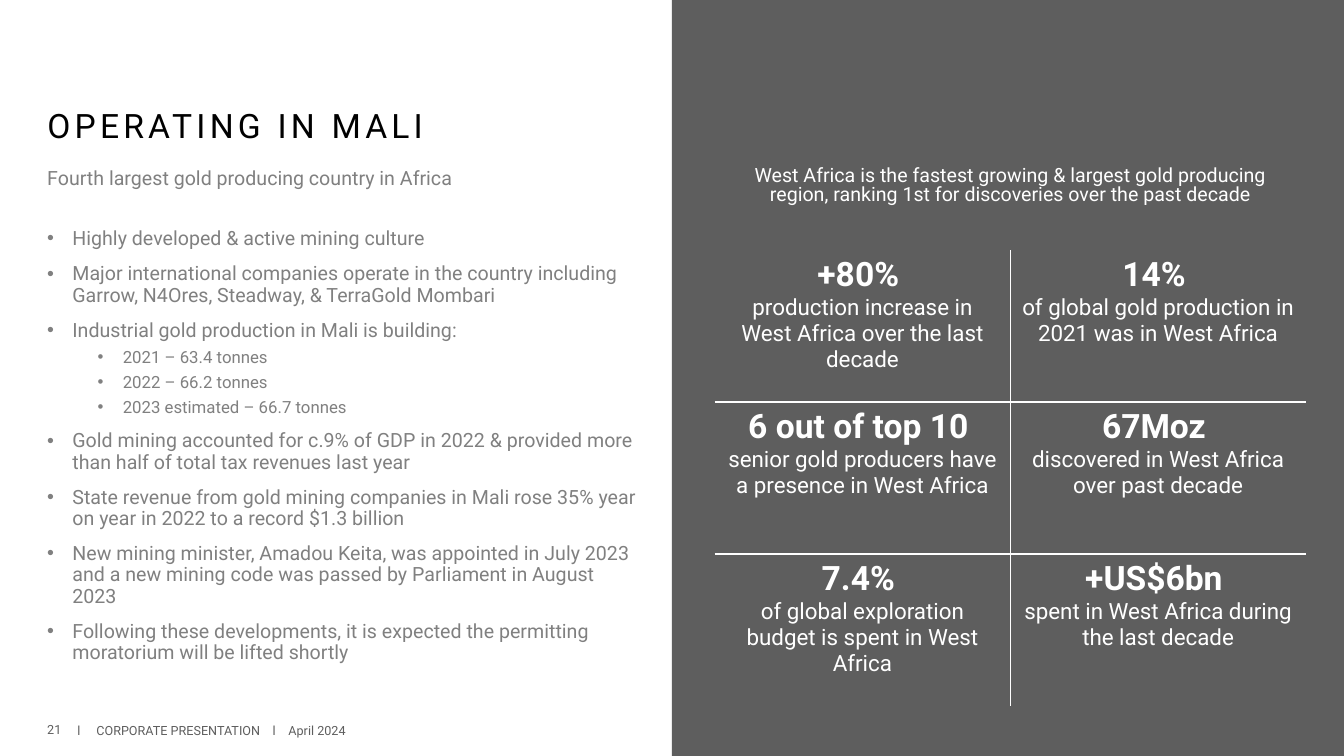
from lxml import etree
from pptx import Presentation
from pptx.dml.color import RGBColor
from pptx.enum import shapes, text
from pptx.oxml import ns
from pptx.util import Cm, Pt

FONT = "Roboto"
WHITE, BLACK, DARK, GREY = "FFFFFF", "000000", "5E5E5E", "808080"
CENTRE = text.PP_ALIGN.CENTER
MIDDLE = text.MSO_ANCHOR.MIDDLE
INDENT = Cm(0.635)

FACTS = [
    (0, "Highly developed & active mining culture"),
    (0, "Major international companies operate in the country including "
        "Garrow, N4Ores, Steadway, & TerraGold Mombari"),
    (0, "Industrial gold production in Mali is building:"),
    (1, "2021 – 63.4 tonnes"),
    (1, "2022 – 66.2 tonnes"),
    (1, "2023 estimated – 66.7 tonnes"),
    (0, "Gold mining accounted for c.9% of GDP in 2022 & provided more than "
        "half of total tax revenues last year"),
    (0, "State revenue from gold mining companies in Mali rose 35% year on "
        "year in 2022 to a record $1.3 billion"),
    (0, "New mining minister, Amadou Keita, was appointed in July 2023 and a "
        "new mining code was passed by Parliament in August 2023"),
    (0, "Following these developments, it is expected the permitting "
        "moratorium will be lifted shortly"),
]

STATISTICS = [
    [("+80% ", "production increase in West Africa over the last decade"),
     ("14% ", "of global gold production in 2021 was in West Africa")],
    [("6 out of top 10 ", "senior gold producers have a presence in West Africa"),
     ("67Moz ", "discovered in West Africa over past decade")],
    [("7.4% ", "of global exploration budget is spent in West Africa"),
     ("+US$6bn ", "spent in West Africa during the last decade")],
]


def colour(value):
    return RGBColor.from_string(value)


def set_all(target, values):
    for name, value in values.items():
        setattr(target, name, value)


def add_child(parent, tag, **attributes):
    return etree.SubElement(parent, ns.qn(tag), attributes)


def write(para, words, size, ink, bold=False, **layout):
    set_all(para, layout)
    span = para.add_run()
    span.text = words
    set_all(span.font, {"name": FONT, "size": Pt(size), "bold": bold})
    span.font.color.rgb = colour(ink)
    return span


def add_box(page, left, top, width, height, anchor=MIDDLE):
    box = page.shapes.add_textbox(Cm(left), Cm(top), Cm(width), Cm(height))
    set_all(box.text_frame, {"word_wrap": True, "vertical_anchor": anchor})
    return box.text_frame


def add_panel(page):
    panel = page.shapes.add_shape(shapes.MSO_SHAPE.RECTANGLE,
                                  Cm(16.93), 0, Cm(16.94), Cm(19.05))
    panel.shadow.inherit = False
    panel.fill.solid()
    panel.fill.fore_color.rgb = colour(DARK)
    panel.line.fill.background()


def add_title(page, words):
    title = page.shapes.title
    set_all(title, {"left": Cm(0.94), "top": Cm(2.34),
                    "width": Cm(15.7), "height": Cm(1.75)})
    title.text_frame.vertical_anchor = MIDDLE
    span = write(title.text_frame.paragraphs[0], words, 24, BLACK,
                 alignment=text.PP_ALIGN.LEFT, line_spacing=0.9)
    span._r.get_or_add_rPr().set("spc", "300")


def add_facts(page):
    frame = add_box(page, 0.94, 5.64, 15.49, 12.07, text.MSO_ANCHOR.TOP)
    for index, (level, words) in enumerate(FACTS):
        para = frame.add_paragraph() if index else frame.paragraphs[0]
        properties = para._p.get_or_add_pPr()
        properties.set("marL", str(INDENT * (1 + 2 * level)))
        properties.set("indent", str(-INDENT))
        add_child(properties, "a:buFont", typeface="Arial")
        add_child(properties, "a:buChar", char="•")
        before = (5 if level else 10) if index else 0
        write(para, words, 12 if level else 14, GREY,
              level=level, line_spacing=0.9, space_before=Pt(before))


def draw_borders(cell, visible):
    """Draw the named sides in white and hide the others."""
    properties = cell._tc.get_or_add_tcPr()
    for side in "LRTB":
        line = add_child(properties, f"a:ln{side}", w=str(Pt(1)))
        if side in visible:
            fill = add_child(line, "a:solidFill")
            add_child(fill, "a:srgbClr", val=WHITE)
        else:
            add_child(line, "a:noFill")


def add_statistics(page):
    rows, columns = len(STATISTICS), len(STATISTICS[0])
    table = page.shapes.add_table(rows, columns, Cm(18.01), Cm(6.3),
                                  Cm(14.9), Cm(11.49)).table
    set_all(table, {"first_row": False, "horz_banding": False})
    for row, entries in enumerate(STATISTICS):
        for column, (figure, meaning) in enumerate(entries):
            cell = table.cell(row, column)
            inner = {"L": column > 0, "R": column < columns - 1,
                     "T": row > 0, "B": row < rows - 1}
            draw_borders(cell, [side for side in inner if inner[side]])
            cell.fill.background()
            frame = cell.text_frame
            write(frame.paragraphs[0], figure, 24, WHITE, True, alignment=CENTRE)
            write(frame.add_paragraph(), meaning, 16, WHITE, alignment=CENTRE)


def add_footer(page):
    number = add_box(page, 0.94, 17.86, 1.88, 1.02)
    write(number.paragraphs[0], "21", 9, DARK)
    para = add_box(page, 1.7, 17.91, 11.43, 1.02).paragraphs[0]
    tabs = add_child(para._p.get_or_add_pPr(), "a:tabLst")
    for stop in (0.48, 4.92, 5.32):
        add_child(tabs, "a:tab", pos=str(Cm(stop)), algn="l")
    write(para, "l\tCORPORATE PRESENTATION\tl\tApril 2024", 9, DARK)


def main():
    deck = Presentation()
    set_all(deck, {"slide_width": Cm(33.87), "slide_height": Cm(19.05)})
    page = deck.slides.add_slide(deck.slide_layouts.get_by_name("Title Only"))
    add_panel(page)
    add_title(page, "OPERATING IN MALI")
    add_footer(page)
    intro = add_box(page, 18.01, 4.06, 14.91, 1.27)
    write(intro.paragraphs[0],
          "West Africa is the fastest growing & largest gold producing region, "
          "ranking 1st for discoveries over the past decade",
          14, WHITE, alignment=CENTRE, line_spacing=0.8)
    add_statistics(page)
    subtitle = add_box(page, 0.94, 3.89, 16, 1.27)
    write(subtitle.paragraphs[0],
          "Fourth largest gold producing country in Africa",
          14, GREY, line_spacing=0.9)
    add_facts(page)
    deck.save("out.pptx")


if __name__ == "__main__":
    main()
